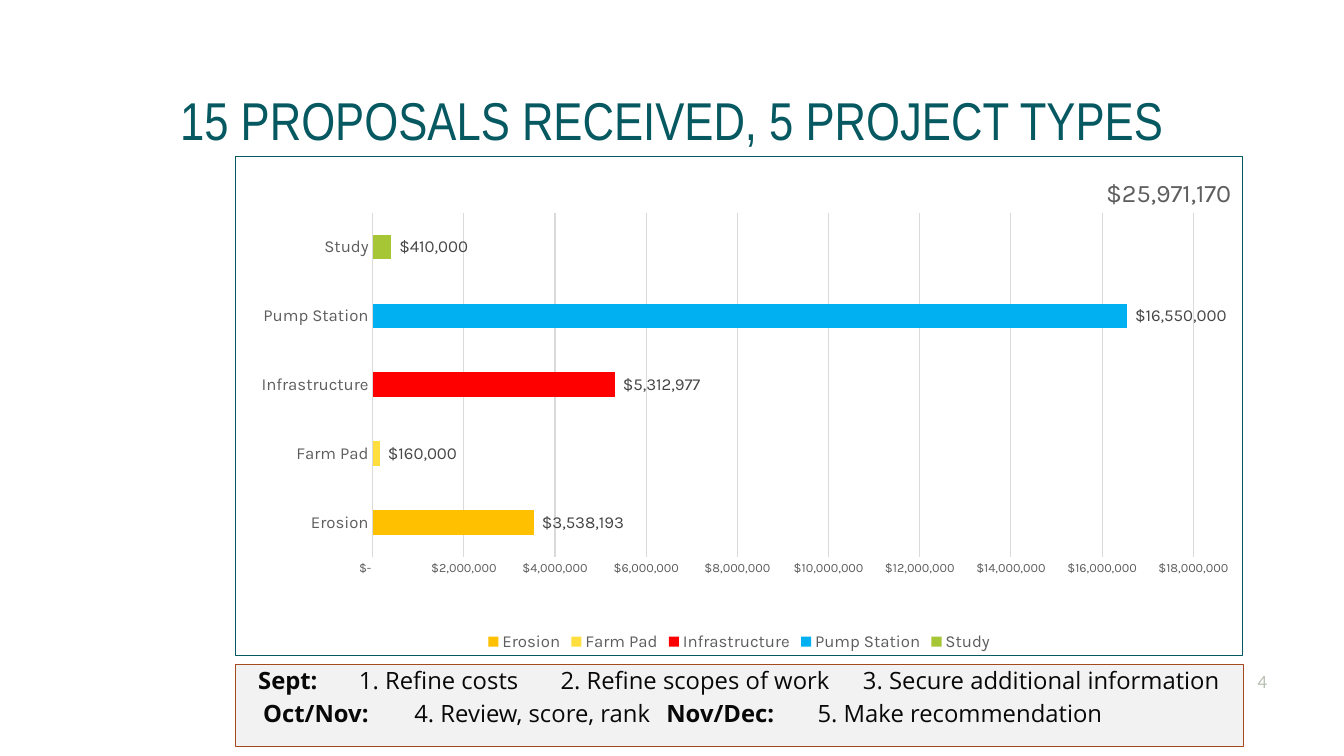
from lxml import etree
from pptx import Presentation
from pptx.chart.data import CategoryChartData as ChartData
from pptx.dml.color import RGBColor as RGB
from pptx.enum.chart import (XL_CHART_TYPE as Kind, XL_LABEL_POSITION as Spot,
                             XL_LEGEND_POSITION as Side, XL_TICK_MARK as Tick)
from pptx.enum.shapes import MSO_SHAPE as Shape
from pptx.enum.text import MSO_ANCHOR as Anchor, PP_ALIGN as Align
from pptx.oxml import parse_xml
from pptx.oxml.ns import nsdecls, qn
from pptx.util import Pt

# Content
TITLE = "15 PROPOSALS RECEIVED, 5 PROJECT TYPES"
TOTAL = "$25,971,170"
PAGE = "4"
COSTS = [  # project type, cost, colour
    ("Erosion", 3538193, "FFC000"),
    ("Farm Pad", 160000, "FFDE3E"),
    ("Infrastructure", 5312977, "FF0000"),
    ("Pump Station", 16550000, "00B0F0"),
    ("Study", 410000, "A7C636"),
]
STEPS = [  # each line: (start in points, text, bold)
    [(16.4, "Sept:", True), (80.7, "1. Refine costs", False),
     (225.7, "2. Refine scopes of work", False),
     (448.6, "3. Secure additional information", False)],
    [(20, "Oct/Nov:", True), (117.1, "4. Review, score, rank", False),
     (397.9, "Nov/Dec:", True), (497.1, "5. Make recommendation", False)],
]
MONEY = r'_("$"* #,##0_);_("$"* \(#,##0\);_("$"* "-"??_);_(@_)'

# Theme: font name, size, colour
THEME = {
    "title": dict(name="Arial Narrow", size=38, color="065861"),
    "page": dict(name="Lato", size=12, color="B6BEB1"),
    "step": dict(name="Open Sans", size=17, color="080808"),
    "total": dict(name="Karla", size=18, color="5E5E5E"),
    "label": dict(name="Karla", size=12, color="464646"),
    "type": dict(name="Karla", size=12, color="5E5E5E"),
    "scale": dict(name="Karla", size=9, color="5E5E5E"),
    "grid": "DADADA", "frame": "065861", "box": "F2F2F2", "edge": "A5491E",
}

# Places in points: left, top, width, height
WIDE, HIGH = 960, 540
LEFT, SPAN = 168, 720
AT = {
    "title": (48, 57.6, 864, 54),
    "chart": (LEFT, 111.6, SPAN, 357.1),
    "steps": (LEFT, 474.5, SPAN, 59),
    "page": (848.2, 475.9, 64.1, 21.6),
}


def place(key):
    return [Pt(n) for n in AT[key]]


def style(font, key, bold=False):
    look = THEME[key]
    for attr, val in dict(name=look["name"], size=Pt(look["size"]), bold=bold).items():
        setattr(font, attr, val)
    font.color.rgb = RGB.from_string(look["color"])


def stroke(line, color):
    line.color.rgb = RGB.from_string(color)
    line.width = Pt(0.75)


def setup(frame, anchor, pads):
    names = ("margin_left", "margin_top", "margin_right", "margin_bottom")
    vals = dict(zip(names, map(Pt, pads)), word_wrap=True, vertical_anchor=anchor)
    for attr, val in vals.items():
        setattr(frame, attr, val)


def label(slide, key, text, align, anchor, pads):
    frame = slide.shapes.add_textbox(*place(key)).text_frame
    setup(frame, anchor, pads)
    para = frame.paragraphs[0]
    para.alignment = align
    run = para.add_run()
    run.text = text
    style(run.font, key)


def layout(spots, inner=False):
    target = '<c:layoutTarget val="inner"/>' if inner else ""
    modes = "".join(f'<c:{n}Mode val="edge"/>' for n in "xy")
    vals = "".join(f'<c:{n} val="{v}"/>' for n, v in zip("xywh", spots))
    return parse_xml(f'<c:layout {nsdecls("c")}><c:manualLayout>{target}{modes}{vals}'
                     '</c:manualLayout></c:layout>')


def clear(node):
    for old in node.findall(qn("c:layout")):
        node.remove(old)


def draw_chart(slide):
    data = ChartData(number_format=MONEY)
    data.categories = [name for name, _, _ in COSTS]
    data.add_series("Series 1", [cost for _, cost, _ in COSTS])
    chart = slide.shapes.add_chart(Kind.BAR_CLUSTERED, *place("chart"), data).chart
    style(chart.font, "type")

    # Total at top right
    chart.has_title = True
    head = chart.chart_title
    head.text_frame.text = TOTAL
    style(head.text_frame.paragraphs[0].runs[0].font, "total")
    clear(head._element)
    head._element.find(qn("c:tx")).addnext(layout((0.86, 0.03)))

    # Bars and their values
    plot = chart.plots[0]
    plot.gap_width = 182
    plot.vary_by_categories = True
    for i, (_, _, color) in enumerate(COSTS):
        fill = plot.series[0].points[i].format.fill
        fill.solid()
        fill.fore_color.rgb = RGB.from_string(color)
    plot.has_data_labels = True
    tags = plot.data_labels
    for attr, val in dict(show_value=True, position=Spot.OUTSIDE_END, number_format=MONEY,
                          number_format_is_linked=False).items():
        setattr(tags, attr, val)
    style(tags.font, "label")

    # Axes
    types, scale = chart.category_axis, chart.value_axis
    for axis, key in ((types, "type"), (scale, "scale")):
        axis.major_tick_mark = axis.minor_tick_mark = Tick.NONE
        style(axis.tick_labels.font, key)
    types.has_major_gridlines = False
    stroke(types.format.line, THEME["grid"])
    for attr, val in dict(minimum_scale=0, maximum_scale=18000000, major_unit=2000000,
                          has_major_gridlines=True).items():
        setattr(scale, attr, val)
    scale.format.line.fill.background()
    stroke(scale.major_gridlines.format.line, THEME["grid"])
    scale.tick_labels.number_format = MONEY
    scale.tick_labels.number_format_is_linked = False

    # Legend, plot place and frame
    chart.has_legend = True
    chart.legend.position = Side.BOTTOM
    chart.legend.include_in_layout = False
    style(chart.legend.font, "type")
    root = chart._chartSpace
    area = root.find(qn("c:chart")).find(qn("c:plotArea"))
    clear(area)
    area.insert(0, layout((0.136, 0.112, 0.815, 0.69), True))
    root.find(qn("c:chart")).addnext(parse_xml(
        f'<c:spPr {nsdecls("c", "a")}><a:noFill/><a:ln w="{Pt(0.75)}"><a:solidFill>'
        f'<a:srgbClr val="{THEME["frame"]}"/></a:solidFill></a:ln></c:spPr>'))


def draw_steps(slide):
    box = slide.shapes.add_shape(Shape.RECTANGLE, *place("steps"))
    box.shadow.inherit = False
    box.fill.solid()
    box.fill.fore_color.rgb = RGB.from_string(THEME["box"])
    stroke(box.line, THEME["edge"])
    frame = box.text_frame
    setup(frame, Anchor.TOP, (0, 3.6, 0, 0))
    for i, parts in enumerate(STEPS):
        para = frame.add_paragraph() if i else frame.paragraphs[0]
        para.alignment = Align.LEFT
        para.line_spacing = 0.9
        if i:
            para.space_before = Pt(5)
        # Tab stops set the columns
        props = para._p.get_or_add_pPr()
        props.set("marL", str(Pt(parts[0][0])))
        props.set("indent", "0")
        tabs = etree.SubElement(props, qn("a:tabLst"))
        for start, _, _ in parts[1:]:
            etree.SubElement(tabs, qn("a:tab"), pos=str(Pt(start)), algn="l")
        for j, (_, text, bold) in enumerate(parts):
            run = para.add_run()
            run.text = "\t" + text if j else text
            style(run.font, "step", bold)


def main():
    deck = Presentation()
    deck.slide_width, deck.slide_height = Pt(WIDE), Pt(HIGH)
    slide = deck.slides.add_slide(deck.slide_layouts[6])
    label(slide, "page", PAGE, Align.RIGHT, Anchor.MIDDLE, (0, 3.6, 7.2, 3.6))
    label(slide, "title", TITLE, Align.CENTER, Anchor.BOTTOM, (0, 3.6, 0, 3.6))
    draw_chart(slide)
    draw_steps(slide)
    deck.save("out.pptx")


if __name__ == "__main__":
    main()
